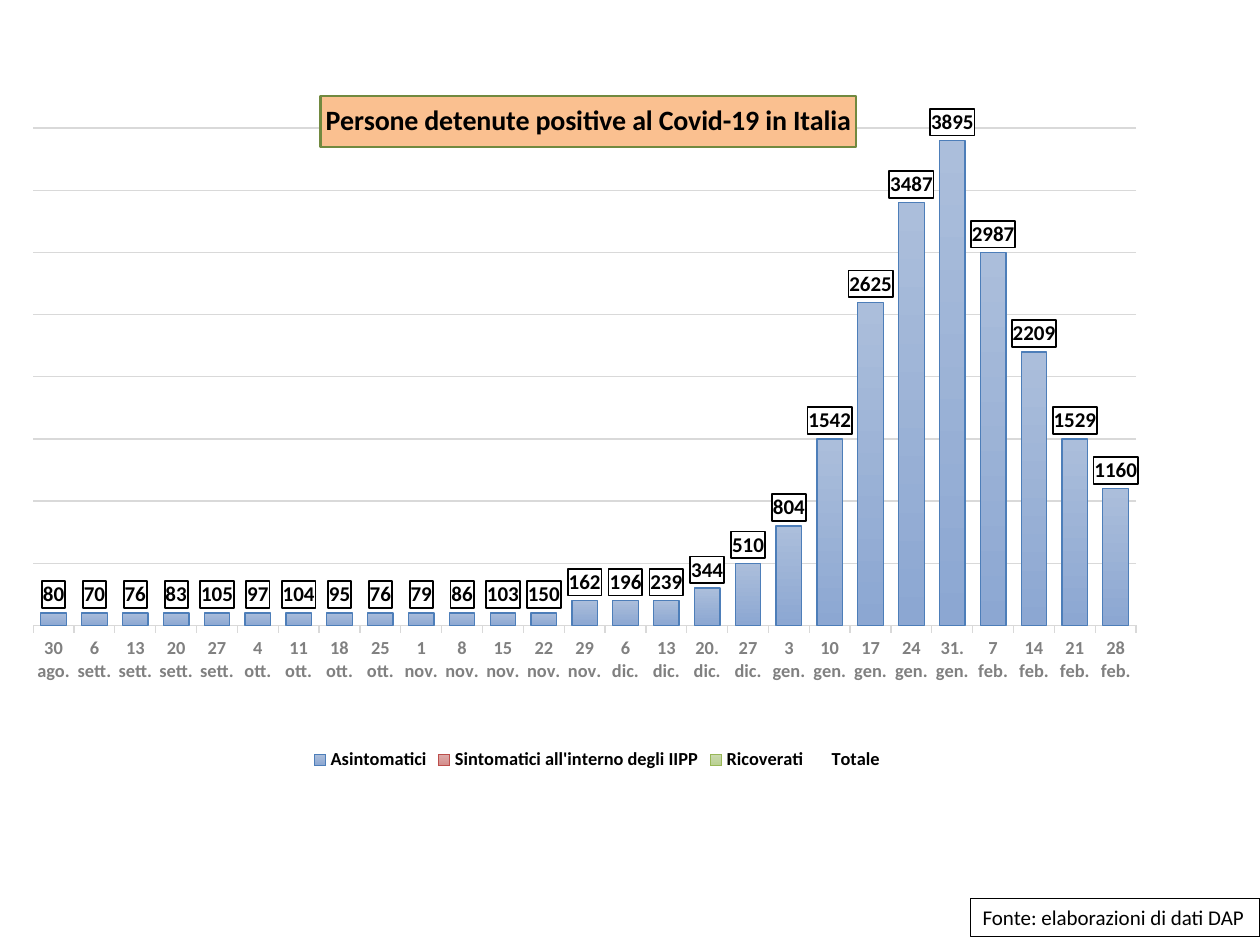
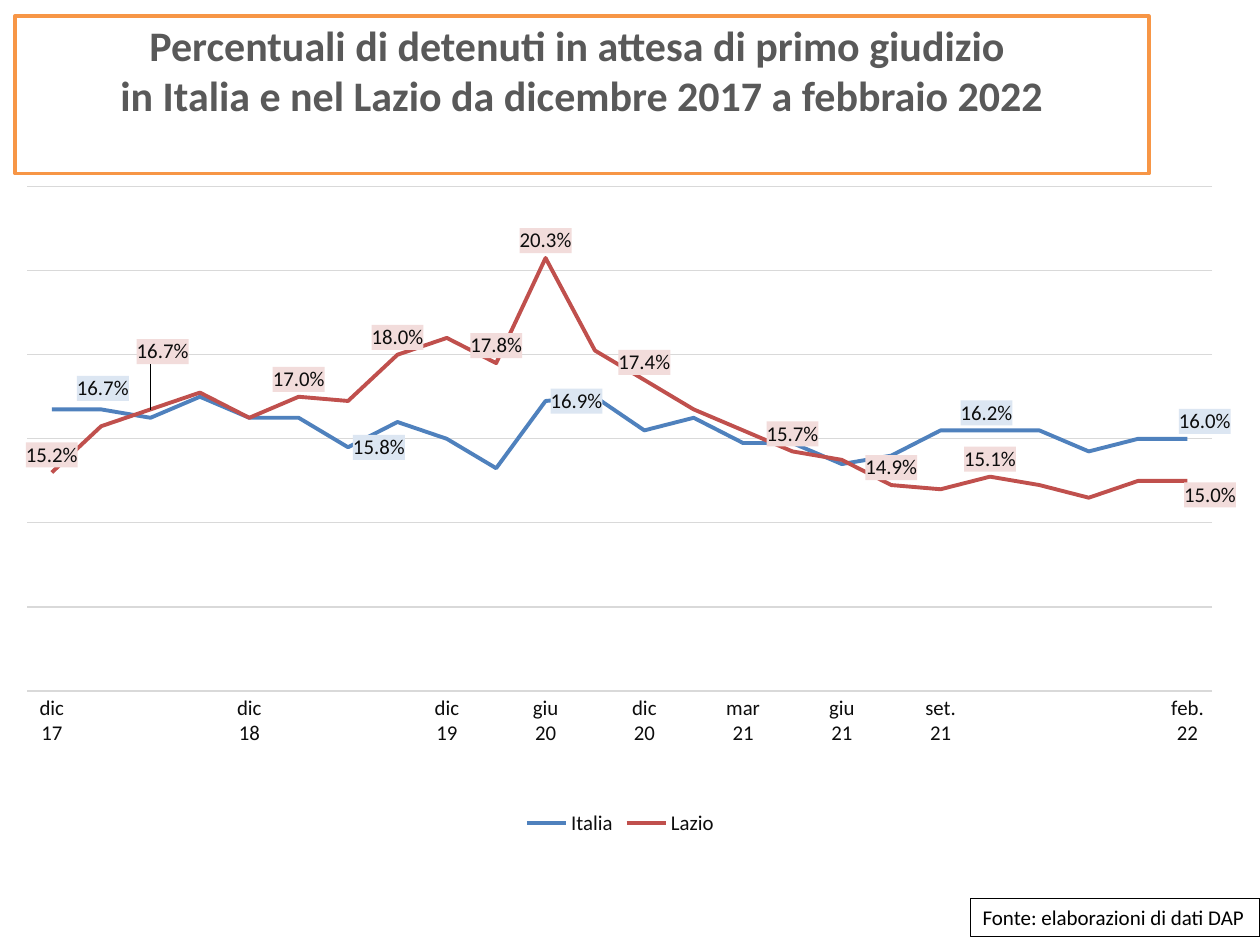
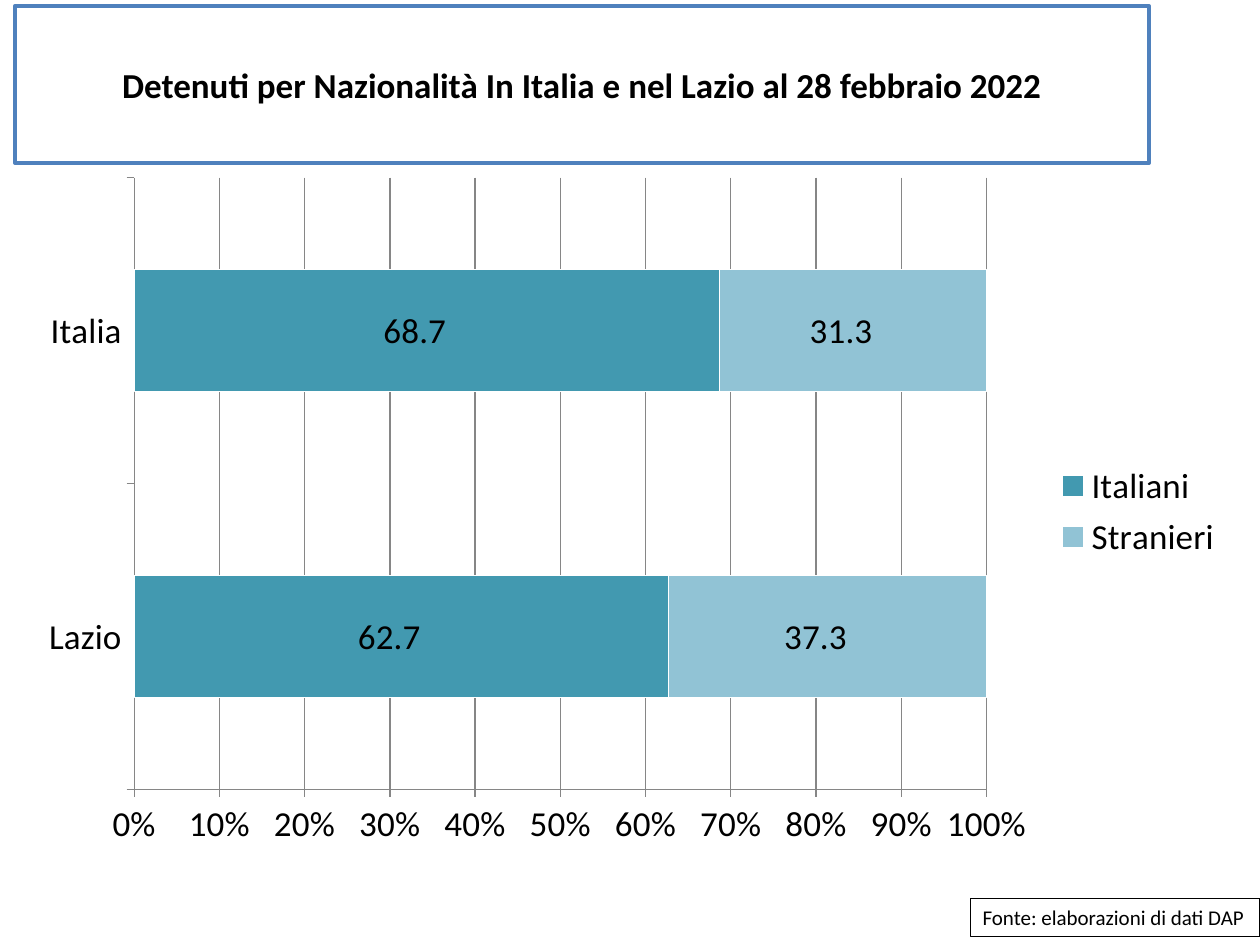
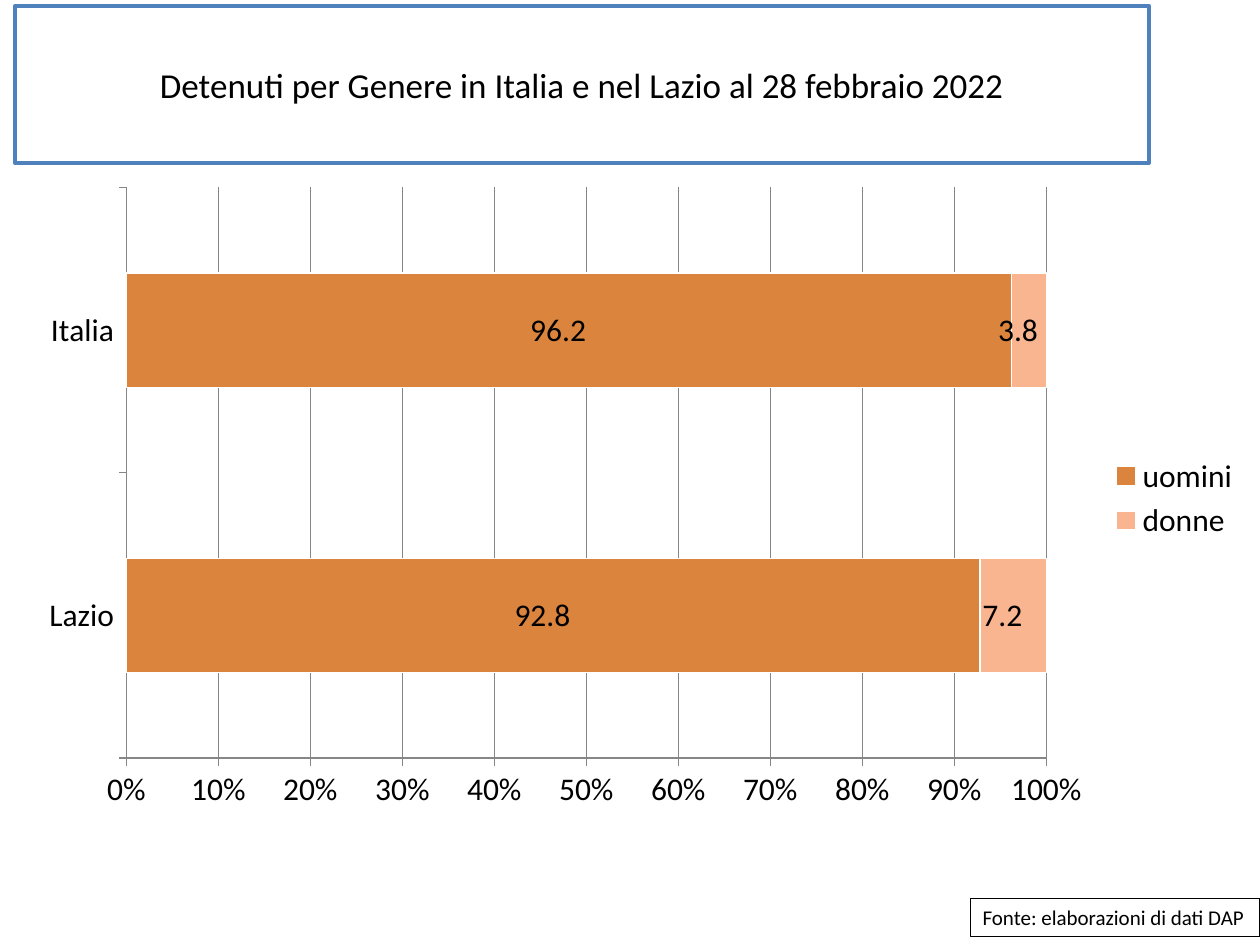
from dataclasses import dataclass

from pptx import Presentation
from pptx.chart.data import CategoryChartData
from pptx.dml.color import RGBColor
from pptx.enum.chart import (XL_CHART_TYPE, XL_LABEL_POSITION, XL_LEGEND_POSITION,
                             XL_MARKER_STYLE, XL_TICK_MARK)
from pptx.enum.shapes import MSO_SHAPE
from pptx.enum.text import MSO_ANCHOR, PP_ALIGN
from pptx.oxml import parse_xml
from pptx.oxml.ns import nsdecls, qn
from pptx.util import Pt

STACKED, LINE = XL_CHART_TYPE.COLUMN_STACKED, XL_CHART_TYPE.LINE
BAR_100 = XL_CHART_TYPE.BAR_STACKED_100
ABOVE, BESIDE = XL_LABEL_POSITION.ABOVE, XL_LABEL_POSITION.RIGHT
CENTER, INSIDE_BASE = XL_LABEL_POSITION.CENTER, XL_LABEL_POSITION.INSIDE_BASE
BOTTOM, RIGHT = XL_LEGEND_POSITION.BOTTOM, XL_LEGEND_POSITION.RIGHT
TICK_OUT, TICK_NONE = XL_TICK_MARK.OUTSIDE, XL_TICK_MARK.NONE
NO_MARKER = XL_MARKER_STYLE.NONE


@dataclass(frozen=True)
class Theme:
    font: str = "Calibri"
    black: RGBColor = RGBColor(0, 0, 0)
    white: RGBColor = RGBColor(255, 255, 255)
    ink: RGBColor = RGBColor.from_string("0D0D0D")
    title_gray: RGBColor = RGBColor.from_string("595959")
    label_gray: RGBColor = RGBColor.from_string("808080")
    light_grid: RGBColor = RGBColor.from_string("D9D9D9")
    dark_grid: RGBColor = RGBColor.from_string("868686")
    orange: RGBColor = RGBColor.from_string("F79646")
    peach: RGBColor = RGBColor.from_string("FAC090")
    green: RGBColor = RGBColor.from_string("71893F")
    blue: RGBColor = RGBColor.from_string("4F81BD")
    red: RGBColor = RGBColor.from_string("C0504D")
    small: float = 10.5
    body: float = 12
    chart_title: float = 16
    title: float = 20
    large_title: float = 24


theme = Theme()


def set_layout(parent, index, **values):
    """Give a chart part a manual layout, as its child number index."""
    for old in parent.findall(qn("c:layout")):
        parent.remove(old)
    items = "".join(f'<c:{tag} val="{value}"/>' for tag, value in values.items())
    parent.insert(index, parse_xml(
        f'<c:layout {nsdecls("c")}><c:manualLayout>{items}</c:manualLayout></c:layout>'))


def add_chart(page, kind, area, categories, series, plot_area, size, ink,
              grid, axis_ticks, legend_at, number_format="General"):
    """Add a chart with the shared style and return it."""
    data = CategoryChartData(number_format=number_format)
    data.categories = categories
    for name, values in series.items():
        data.add_series(name, values)
    chart = page.shapes.add_chart(kind, *map(Pt, area), data).chart
    chart.has_title = False
    chart.has_legend = True
    chart.legend.position = legend_at
    chart.legend.include_in_layout = False
    for font in (chart.font, chart.legend.font, chart.category_axis.tick_labels.font,
                 chart.value_axis.tick_labels.font):
        font.name, font.size, font.color.rgb = theme.font, Pt(size), ink
    for line in (chart.value_axis.major_gridlines.format.line,
                 chart.category_axis.format.line, chart.value_axis.format.line):
        line.color.rgb, line.width = grid, Pt(0.75)
    chart.category_axis.major_tick_mark = axis_ticks
    x, y, w, h = plot_area
    set_layout(chart.element.xpath("c:chart/c:plotArea")[0], 0, layoutTarget="inner",
               xMode="edge", yMode="edge", x=x, y=y, w=w, h=h)
    return chart


deck = Presentation()
deck.slide_width, deck.slide_height = Pt(720), Pt(540)

# Title boxes and the source note of every page
source_box = ("Fonte: elaborazioni di dati DAP", (554.4, 513.5, 165.6, 21.8),
              theme.body, False, theme.black, theme.black, 0.75, PP_ALIGN.LEFT, MSO_ANCHOR.TOP)
title_boxes = [
    None,
    ("Percentuali di detenuti in attesa di primo giudizio \v"
     "in Italia e nel Lazio da dicembre 2017 a febbraio 2022", (8.6, 9.2, 648, 90),
     theme.large_title, True, theme.title_gray, theme.orange, 2, PP_ALIGN.CENTER, MSO_ANCHOR.TOP),
    ("Detenuti per Nazionalità In Italia e nel Lazio al 28 febbraio 2022", (8.6, 3.3, 648, 90),
     theme.title, True, theme.black, theme.blue, 2, PP_ALIGN.CENTER, MSO_ANCHOR.MIDDLE),
    ("Detenuti per Genere in Italia e nel Lazio al 28 febbraio 2022", (8.6, 3.3, 648, 90),
     theme.title, False, theme.black, theme.blue, 2, PP_ALIGN.CENTER, MSO_ANCHOR.MIDDLE),
]
pages = []
for title_box in title_boxes:
    page = deck.slides.add_slide(deck.slide_layouts[6])
    pages.append(page)
    for entry in filter(None, (title_box, source_box)):
        text, area, size, bold, ink, border, width, align, anchor = entry
        box = page.shapes.add_shape(MSO_SHAPE.RECTANGLE, *map(Pt, area))
        box.shadow.inherit = False
        box.fill.solid()
        box.fill.fore_color.rgb = theme.white
        box.line.color.rgb, box.line.width = border, Pt(width)
        frame = box.text_frame
        frame.word_wrap = entry is title_box
        frame.vertical_anchor = anchor
        if entry is title_box:
            frame.margin_top = frame.margin_bottom = Pt(1.9)
        para = frame.paragraphs[0]
        para.text, para.alignment = text, align
        para.font.name, para.font.size, para.font.bold = theme.font, Pt(size), bold
        para.font.color.rgb = ink
covid_page, trial_page, nationality_page, gender_page = pages

# Page 1: positive cases by week, parts rounded to hundreds
weeks = ["30 ago.", "6 sett.", "13 sett.", "20 sett.", "27 sett.", "4 ott.", "11 ott.",
         "18 ott.", "25 ott.", "1 nov.", "8 nov.", "15 nov.", "22 nov.", "29 nov.",
         "6 dic.", "13 dic.", "20. dic.", "27 dic.", "3 gen.", "10 gen.", "17 gen.",
         "24 gen.", "31. gen.", "7 feb.", "14 feb.", "21 feb.", "28 feb."]
cases = {
    "Asintomatici": [100] * 13 + [200, 200, 200, 300, 500, 800, 1500, 2600, 3400, 3900,
                                  3000, 2200, 1500, 1100],
    "Sintomatici all'interno degli IIPP": [0] * len(weeks),
    "Ricoverati": [0] * len(weeks),
    "Totale": [80, 70, 76, 83, 105, 97, 104, 95, 76, 79, 86, 103, 150, 162, 196, 239, 344, 510,
               804, 1542, 2625, 3487, 3895, 2987, 2209, 1529, 1160],
}
chart = add_chart(covid_page, STACKED, (14.4, 43.2, 653.8, 400.3), weeks, cases,
                  (0.007, 0.075, 0.964, 0.71), theme.small, theme.black,
                  theme.light_grid, TICK_OUT, BOTTOM)
chart.legend.font.bold = True
week_font = chart.category_axis.tick_labels.font
week_font.bold, week_font.color.rgb = True, theme.label_gray
axis = chart.value_axis
axis.minimum_scale, axis.maximum_scale, axis.major_unit = 0, 4000, 500
axis.visible = False
plot = chart.plots[0]
plot.gap_width, plot.overlap, plot.vary_by_categories = 60, 100, False
*case_series, total_series = plot.series
case_colors = [("ABBEDB", "8CA7D2", "4D7EB9"), ("DDACAB", "D48D8B", "BC4E4B"),
               ("CADAAF", "B9D091", "98B757")]
for series, (top, bottom, border) in zip(case_series, case_colors):
    fill = series.format.fill
    fill.gradient()
    fill.gradient_angle = 270
    for stop, color in zip(fill.gradient_stops, (top, bottom)):
        stop.color.rgb = RGBColor.from_string(color)
    series.format.line.color.rgb = RGBColor.from_string(border)
    series.format.line.width = Pt(0.75)

# Boxed totals above the columns
total_series.format.fill.background()
total_series.format.line.fill.background()
labels = total_series.data_labels
labels.show_value, labels.position = True, INSIDE_BASE
labels.font.name, labels.font.size, labels.font.bold = theme.font, Pt(theme.body), True
labels.font.color.rgb = theme.black
labels._element.find(qn("c:txPr")).addprevious(parse_xml(
    f'<c:spPr {nsdecls("c", "a")}><a:solidFill><a:srgbClr val="{theme.white}"/></a:solidFill>'
    f'<a:ln w="{Pt(1)}"><a:solidFill><a:srgbClr val="{theme.black}"/></a:solidFill></a:ln></c:spPr>'))

# Chart title on a peach band
chart.has_title = True
heading = chart.chart_title
heading.format.fill.solid()
heading.format.fill.fore_color.rgb = theme.peach
heading.format.line.color.rgb, heading.format.line.width = theme.green, Pt(1.25)
para = heading.text_frame.paragraphs[0]
para.text = "Persone detenute positive al Covid-19 in Italia"
para.font.name, para.font.size, para.font.bold = theme.font, Pt(theme.chart_title), True
para.font.color.rgb = theme.black
set_layout(chart.element.xpath("c:chart/c:title")[0], 1,
           xMode="edge", yMode="edge", x=0.258, y=0.029)

# Page 2: share awaiting first judgment, newest month first
months = ["feb. 22", "", "", "", "", "set. 21", "", "giu 21", "", "mar 21", "", "dic 20",
          "", "giu 20", "", "dic 19", "", "", "", "dic 18", "", "", "", "dic 17"]
shares = {
    "Italia": [0.16, 0.16, 0.157, 0.162, 0.162, 0.162, 0.156, 0.154, 0.159, 0.159, 0.165, 0.162,
               0.17, 0.169, 0.153, 0.16, 0.164, 0.158, 0.165, 0.165, 0.17, 0.165, 0.167, 0.167],
    "Lazio": [0.15, 0.15, 0.146, 0.149, 0.151, 0.148, 0.149, 0.155, 0.157, 0.162, 0.167, 0.174,
              0.181, 0.203, 0.178, 0.184, 0.18, 0.169, 0.17, 0.165, 0.171, 0.167, 0.163, 0.152],
}
trial_area = (8.6, 99.4, 697.7, 380.9)
chart = add_chart(trial_page, LINE, trial_area, months, shares, (0.01, 0.019, 0.979, 0.757),
                  theme.body, theme.ink, theme.light_grid, TICK_NONE, BOTTOM, "0.0%")
chart.category_axis.reverse_order = True
axis = chart.value_axis
axis.minimum_scale, axis.maximum_scale, axis.major_unit = 0.1, 0.22, 0.02
axis.visible = False

# Labelled points: index -> side, and shift right and down in points
italy_labels = {0: (ABOVE, 10, 0), 4: (ABOVE, -2, 0), 13: (BESIDE, 0, 0),
                17: (BESIDE, 0, 0), 22: (ABOVE, 1, -2)}
lazio_labels = {index: (ABOVE, 0, 0) for index in (4, 6, 8, 11, 13, 14, 16, 18, 23)}
lazio_labels |= {0: (ABOVE, 13, 18), 21: (ABOVE, 7, -23)}
line_styles = [(theme.blue, "DCE6F2", italy_labels), (theme.red, "F2DCDB", lazio_labels)]
for series, (color, tint, point_labels) in zip(chart.plots[0].series, line_styles):
    series.smooth = False
    series.marker.style = NO_MARKER
    series.format.line.color.rgb, series.format.line.width = color, Pt(2.25)
    series.data_labels.show_value = False
    for index, (side, right, down) in point_labels.items():
        label = series.points[index].data_label
        label.font.name, label.font.size = theme.font, Pt(theme.body)
        label.font.color.rgb = theme.ink
        label.position = side
        element = series._element.xpath(f'c:dLbls/c:dLbl[c:idx/@val="{index}"]')[0]
        for old in element.findall(qn("c:spPr")):
            element.remove(old)
        text_style = element.find(qn("c:txPr"))
        text_style.addprevious(parse_xml(
            f'<c:numFmt {nsdecls("c")} formatCode="0.0%" sourceLinked="0"/>'))
        text_style.addprevious(parse_xml(
            f'<c:spPr {nsdecls("c", "a")}><a:solidFill><a:srgbClr val="{tint}"/>'
            '</a:solidFill></c:spPr>'))
        if right or down:
            set_layout(element, 1, x=round(right / trial_area[2], 4),
                       y=round(down / trial_area[3], 4))
    # Moved labels carry no leader lines
    series.data_labels._element.append(parse_xml(
        f'<c:extLst {nsdecls("c")}><c:ext uri="{{CE6537A1-D6FC-4f65-9D91-7224C49458BB}}" '
        'xmlns:c15="http://schemas.microsoft.com/office/drawing/2012/chart">'
        '<c15:showLeaderLines val="0"/></c:ext></c:extLst>'))

# Pages 3 and 4: shares by nationality and by gender
share_format = r"_-* #,##0.0\ _€_-"
share_charts = [
    (nationality_page, (14.4, 93.6, 691.9, 397.4), (0.09, 0.02, 0.704, 0.88), 20,
     {"Italiani": [62.7, 68.7], "Stranieri": [37.3, 31.3]}, ("4299B0", "91C3D5")),
    (gender_page, (14.4, 100.1, 705.6, 369.4), (0.082, 0.019, 0.745, 0.883), 18,
     {"uomini ": [92.8, 96.2], "donne": [7.2, 3.8]}, ("DB843D", "F9B590")),
]
for page, area, plot_area, size, groups, colors in share_charts:
    chart = add_chart(page, BAR_100, area, ["Lazio", "Italia"], groups, plot_area, size,
                      theme.black, theme.dark_grid, TICK_OUT, RIGHT, share_format)
    axis = chart.value_axis
    axis.minimum_scale, axis.maximum_scale, axis.major_unit = 0, 1, 0.1
    axis.major_tick_mark = TICK_OUT
    axis.tick_labels.number_format = "0%"
    axis.tick_labels.number_format_is_linked = False
    plot = chart.plots[0]
    plot.gap_width, plot.overlap, plot.vary_by_categories = 150, 100, False
    for series, color in zip(plot.series, colors):
        series.format.fill.solid()
        series.format.fill.fore_color.rgb = RGBColor.from_string(color)
        series.format.line.color.rgb, series.format.line.width = theme.white, Pt(0.75)
        labels = series.data_labels
        labels.show_value, labels.position = True, CENTER
        labels.number_format, labels.number_format_is_linked = share_format, False
        labels.font.name, labels.font.size = theme.font, Pt(size)
        labels.font.color.rgb = theme.black

deck.save("out.pptx")
